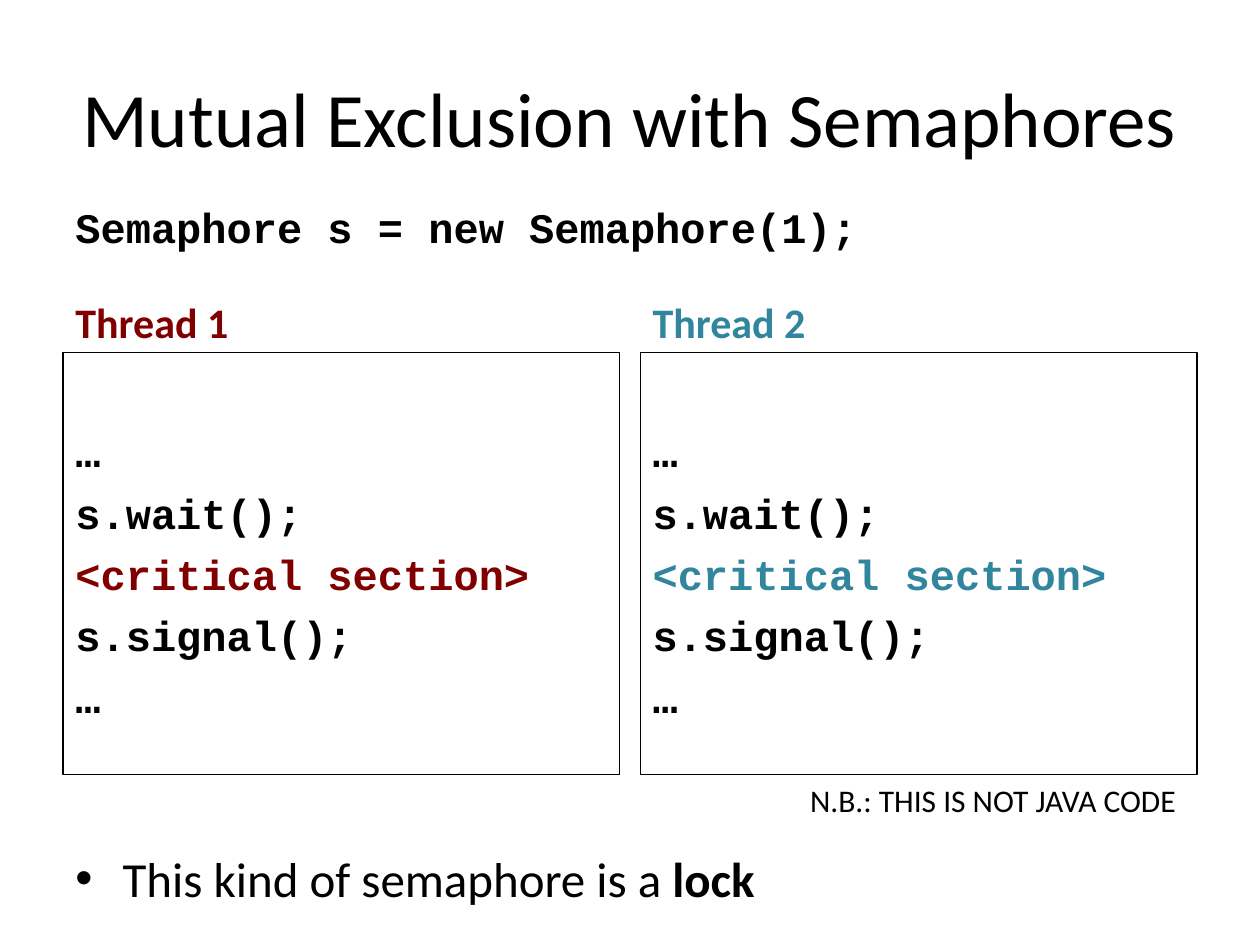
from lxml import etree
from pptx import Presentation
from pptx.dml.color import RGBColor
from pptx.enum.shapes import MSO_SHAPE
from pptx.enum.text import MSO_ANCHOR, PP_ALIGN
from pptx.oxml.ns import qn
from pptx.util import Pt

RECT = MSO_SHAPE.RECTANGLE
TOP, MID, LOW = MSO_ANCHOR.TOP, MSO_ANCHOR.MIDDLE, MSO_ANCHOR.BOTTOM
LEFT, CENTER = PP_ALIGN.LEFT, PP_ALIGN.CENTER
COLORS = {"black": "000000", "red": "800000", "teal": "31859C"}
SANS, MONO = "Calibri", "Courier New"
EDGE, WIDE = 36, 648
COL = 318.2


class Deck:
    def __init__(self):
        self.prs = Presentation()
        self.prs.slide_width, self.prs.slide_height = Pt(720), Pt(540)
        self.slide = self.prs.slides.add_slide(self.prs.slide_layouts[5])

    def color(self, name):
        return RGBColor.from_string(COLORS[name])

    def run(self, para, text, size=24, face=SANS, color="black", bold=False):
        run = para.add_run()
        run.text = text
        style = {"size": Pt(size), "name": face, "bold": bold}
        for key, value in style.items():
            setattr(run.font, key, value)
        run.font.color.rgb = self.color(color)

    def frame(self, shape, anchor=TOP):
        frame = shape.text_frame
        frame.word_wrap = True
        frame.vertical_anchor = anchor
        return frame

    def title(self, text):
        shape = self.slide.shapes.title
        place = {"left": EDGE, "top": 21.6, "width": WIDE, "height": 90}
        for key, value in place.items():
            setattr(shape, key, Pt(value))
        para = self.frame(shape, MID).paragraphs[0]
        para.alignment = CENTER
        self.run(para, text, size=44)

    def text(self, box, text, anchor=TOP, **style):
        """Add a one-line text box and return its paragraph."""
        shape = self.slide.shapes.add_textbox(*map(Pt, box))
        para = self.frame(shape, anchor).paragraphs[0]
        self.run(para, text, **style)
        return para

    def code(self, box, lines):
        """Add an outlined box of (text, color) code lines."""
        shape = self.slide.shapes.add_shape(RECT, *map(Pt, box))
        shape.shadow.inherit = False
        shape.fill.background()
        shape.line.color.rgb = self.color("black")
        shape.line.width = Pt(0.75)
        frame = self.frame(shape)
        frame.margin_top = Pt(41.8)
        for i, (text, color) in enumerate(lines):
            para = frame.add_paragraph() if i else frame.paragraphs[0]
            para.alignment = LEFT
            para.space_before = Pt(6.2 if i else 0)
            self.run(para, text, face=MONO, color=color, bold=True)

    def bullet(self, para, indent=27):
        props = para._p.get_or_add_pPr()
        props.set("marL", str(Pt(indent)))
        props.set("indent", str(-Pt(indent)))
        etree.SubElement(props, qn("a:buFont"), typeface="Arial")
        etree.SubElement(props, qn("a:buChar"), char="•")


def main():
    deck = Deck()
    deck.title("Mutual Exclusion with Semaphores")
    for i, color in enumerate(("red", "teal")):
        left = EDGE + i * (WIDE - COL)
        deck.text((left, 151.2, COL, 50.4), f"Thread {i + 1}", LOW,
                  color=color, bold=True)
        deck.code((left, 201.6, COL, 240.8), [
            ("…", "black"),
            ("s.wait();", "black"),
            ("<critical section>", color),
            ("s.signal();", "black"),
            ("…", "black"),
        ])
    deck.text((EDGE, 111.6, 464.4, 36), "Semaphore s = new Semaphore(1);",
              face=MONO, bold=True)
    deck.text((455.8, 442.8, 228.2, 28.8), "N.B.: THIS IS NOT JAVA CODE",
              size=18)
    para = deck.text((EDGE, 471.6, WIDE, 50.4),
                     "This kind of semaphore is a ", LOW, size=28)
    deck.run(para, "lock", size=28, bold=True)
    deck.bullet(para)
    deck.prs.save("out.pptx")


if __name__ == "__main__":
    main()
